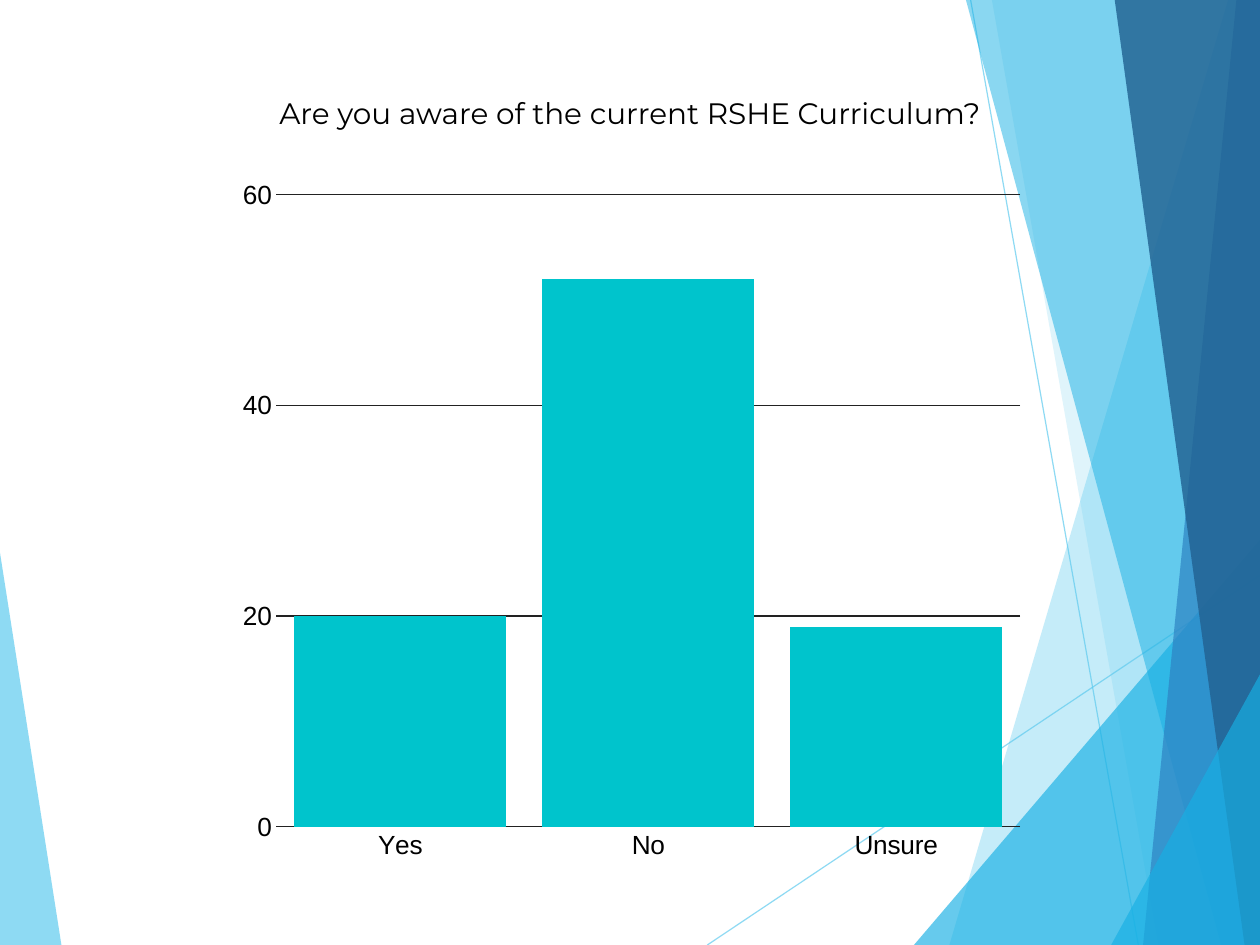
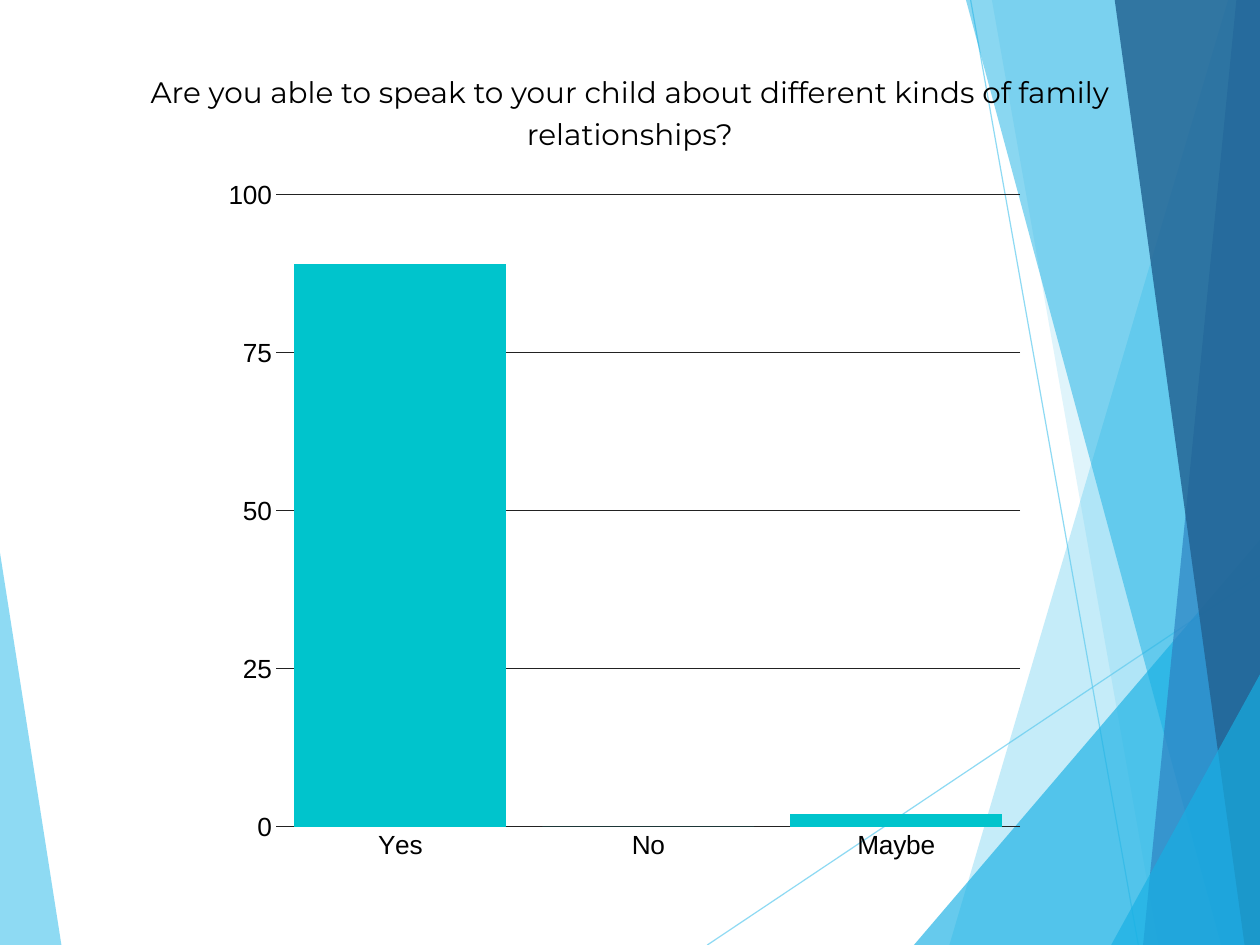
from dataclasses import dataclass

from lxml import etree
from pptx import Presentation
from pptx import util as u
from pptx.chart.data import CategoryChartData
from pptx.dml.color import RGBColor
from pptx.enum import chart as charts, shapes, text
from pptx.oxml.ns import qn

WIDTH, HEIGHT = 10.67, 8


@dataclass(frozen=True)
class Theme:
    ink: str = "000000"
    grid: str = "222222"
    bar: str = "00C4CC"
    sky: str = "5FCBEF"
    azure: str = "17B0E4"
    blue: str = "2E83C3"
    navy: str = "226292"
    title_font: str = "Montserrat"
    label_font: str = "Arial"
    title_size: float = 18
    title_leading: float = 25.2
    label_size: float = 16
    line_width: float = 0.75


THEME = Theme()

# Corner points, colour and opacity of each facet, from back to front
LEFT_FACET = ([(0, 4.68), (0.52, HEIGHT), (0, HEIGHT)], THEME.sky, 70)
RIGHT_FACETS = [
    ([(10.4, 0), (8.04, HEIGHT), (WIDTH, HEIGHT), (WIDTH, 0)], THEME.sky, 36),
    ([(8.4, 0), (9.81, HEIGHT), (WIDTH, HEIGHT), (WIDTH, 0)], THEME.sky, 20),
    ([(7.74, HEIGHT), (WIDTH, 4.57), (WIDTH, HEIGHT)], THEME.azure, 66),
    ([(8.18, 0), (10.34, HEIGHT), (WIDTH, HEIGHT), (WIDTH, 0)], THEME.azure, 50),
    ([(10.47, 0), (9.68, HEIGHT), (WIDTH, HEIGHT), (WIDTH, 0)], THEME.blue, 70),
    ([(9.44, 0), (10.54, HEIGHT), (WIDTH, HEIGHT), (WIDTH, 0)], THEME.navy, 82),
    ([(9.41, HEIGHT), (WIDTH, 5.71), (WIDTH, HEIGHT)], THEME.azure, 66),
]
RAYS = [((5.99, HEIGHT), (WIDTH, 4.87)), ((8.22, 0), (9.64, HEIGHT))]

# Left, top, width, height; the plot is the area between the axes
CHART_FRAME = (1.74, 1.4, 7, 6.1)
PLOT_FRAME = (2.34, 1.65, 6.3, 5.35)
BAR_GAP = 17  # percent of a bar's width

QUESTIONS = [
    dict(title="Are you aware of the current RSHE Curriculum?", title_lines=1,
         answers={"Yes": 20, "No": 52, "Unsure": 19}, maximum=60, step=20),
    dict(title="Are you able to speak to your child about different kinds of "
               "family relationships?", title_lines=2,
         answers={"Yes": 89, "No": 0, "Maybe": 2}, maximum=100, step=25),
]


def inches(*values):
    return [u.Inches(value) for value in values]


def set_opacity(fill_parent, percent):
    """Make the solid colour found inside an element partly transparent."""
    color = fill_parent.find(f".//{qn('a:solidFill')}/{qn('a:srgbClr')}")
    etree.SubElement(color, qn("a:alpha")).set("val", str(percent * 1000))


def format_font(font, name, size, color=THEME.ink):
    font.name = name
    font.size = u.Pt(size)
    font.bold = False
    font.color.rgb = RGBColor.from_string(color)


def write(shape, words, *, font, size, leading, align):
    frame = shape.text_frame
    frame.word_wrap = True
    frame.auto_size = text.MSO_AUTO_SIZE.NONE
    frame.vertical_anchor = text.MSO_ANCHOR.MIDDLE
    frame.margin_left = frame.margin_top = 0
    frame.margin_right = frame.margin_bottom = 0
    frame.text = words
    paragraph = frame.paragraphs[0]
    paragraph.alignment = align
    paragraph.line_spacing = u.Pt(leading)
    format_font(paragraph.runs[0].font, font, size)


class Deck:
    def __init__(self, theme):
        self.theme = theme
        self.presentation = Presentation()
        self.presentation.slide_width = u.Inches(WIDTH)
        self.presentation.slide_height = u.Inches(HEIGHT)
        self.slide = None

    def new_slide(self):
        layout = self.presentation.slide_layouts.get_by_name("Title Only")
        self.slide = self.presentation.slides.add_slide(layout)

    def facet(self, points, color, opacity):
        corners = [inches(*point) for point in points]
        builder = self.slide.shapes.build_freeform(*corners[0])
        builder.add_line_segments(corners[1:], close=True)
        shape = builder.convert_to_shape()
        shape.shadow.inherit = False
        shape.fill.solid()
        shape.fill.fore_color.rgb = RGBColor.from_string(color)
        shape.line.fill.background()
        set_opacity(shape.fill._xPr, opacity)
        return shape

    def ray(self, start, end):
        connector = self.slide.shapes.add_connector(
            shapes.MSO_CONNECTOR.STRAIGHT, *inches(*start, *end))
        connector.line.width = u.Pt(self.theme.line_width)
        connector.line.color.rgb = RGBColor.from_string(self.theme.sky)
        properties = connector._element.spPr
        set_opacity(properties, 70)
        etree.SubElement(properties, qn("a:effectLst"))
        return connector

    def decorate_master(self):
        """Draw the facets on the current slide, then move them to the master."""
        pieces = [self.facet(*LEFT_FACET)]
        pieces += [self.ray(*ray) for ray in RAYS]
        pieces += [self.facet(*facet) for facet in RIGHT_FACETS]
        tree = self.presentation.slide_master.shapes._spTree
        for index, piece in enumerate(pieces):
            element = piece._element
            element.find(f".//{qn('p:cNvPr')}").set("id", str(100 + index))
            tree.insert(2 + index, element)

    def title(self, words, lines):
        shape = self.slide.shapes.title
        height = 0.35 * lines
        shape.left, shape.top, shape.width, shape.height = inches(
            0.52, 0.93 - height / 2, 9.63, height)
        write(shape, words, font=self.theme.title_font, size=self.theme.title_size,
              leading=self.theme.title_leading, align=text.PP_ALIGN.CENTER)

    def bar_chart(self, answers, maximum, step):
        data = CategoryChartData()
        data.categories = answers.keys()
        data.add_series("Answers", answers.values())
        chart = self.slide.shapes.add_chart(
            charts.XL_CHART_TYPE.COLUMN_CLUSTERED, *inches(*CHART_FRAME), data).chart
        chart.has_title = chart.has_legend = False
        format_font(chart.font, self.theme.label_font, self.theme.label_size)

        plot = chart.plots[0]
        plot.vary_by_categories = False
        plot.gap_width = BAR_GAP
        fill = plot.series[0].format.fill
        fill.solid()
        fill.fore_color.rgb = RGBColor.from_string(self.theme.bar)

        values, categories = chart.value_axis, chart.category_axis
        values.minimum_scale, values.maximum_scale = 0, maximum
        values.major_unit = step
        values.has_major_gridlines = True
        values.format.line.fill.background()
        for axis in (values, categories):
            axis.major_tick_mark = charts.XL_TICK_MARK.NONE
        for line in (values.major_gridlines.format.line, categories.format.line):
            line.width = u.Pt(self.theme.line_width)
            line.color.rgb = RGBColor.from_string(self.theme.grid)
        self.clear_background(chart)
        self.fix_plot_area(chart)

    @staticmethod
    def clear_background(chart):
        properties = etree.Element(qn("c:spPr"))
        etree.SubElement(properties, qn("a:noFill"))
        etree.SubElement(etree.SubElement(properties, qn("a:ln")), qn("a:noFill"))
        chart._chartSpace.find(qn("c:chart")).addnext(properties)

    @staticmethod
    def fix_plot_area(chart):
        """Pin the area between the axes to PLOT_FRAME."""
        left, top, width, height = CHART_FRAME
        plot_left, plot_top, plot_width, plot_height = PLOT_FRAME
        area = chart._chartSpace.find(f".//{qn('c:plotArea')}")
        for layout in area.findall(qn("c:layout")):
            area.remove(layout)
        layout = etree.Element(qn("c:layout"))
        area.insert(0, layout)
        manual = etree.SubElement(layout, qn("c:manualLayout"))
        settings = dict(layoutTarget="inner", xMode="edge", yMode="edge",
                        x=(plot_left - left) / width, y=(plot_top - top) / height,
                        w=plot_width / width, h=plot_height / height)
        for name, value in settings.items():
            etree.SubElement(manual, qn(f"c:{name}")).set("val", str(value))


def main():
    deck = Deck(THEME)
    for number, question in enumerate(QUESTIONS):
        deck.new_slide()
        if number == 0:
            deck.decorate_master()
        deck.title(question["title"], question["title_lines"])
        deck.bar_chart(question["answers"], question["maximum"], question["step"])
    deck.presentation.save("out.pptx")


if __name__ == "__main__":
    main()
